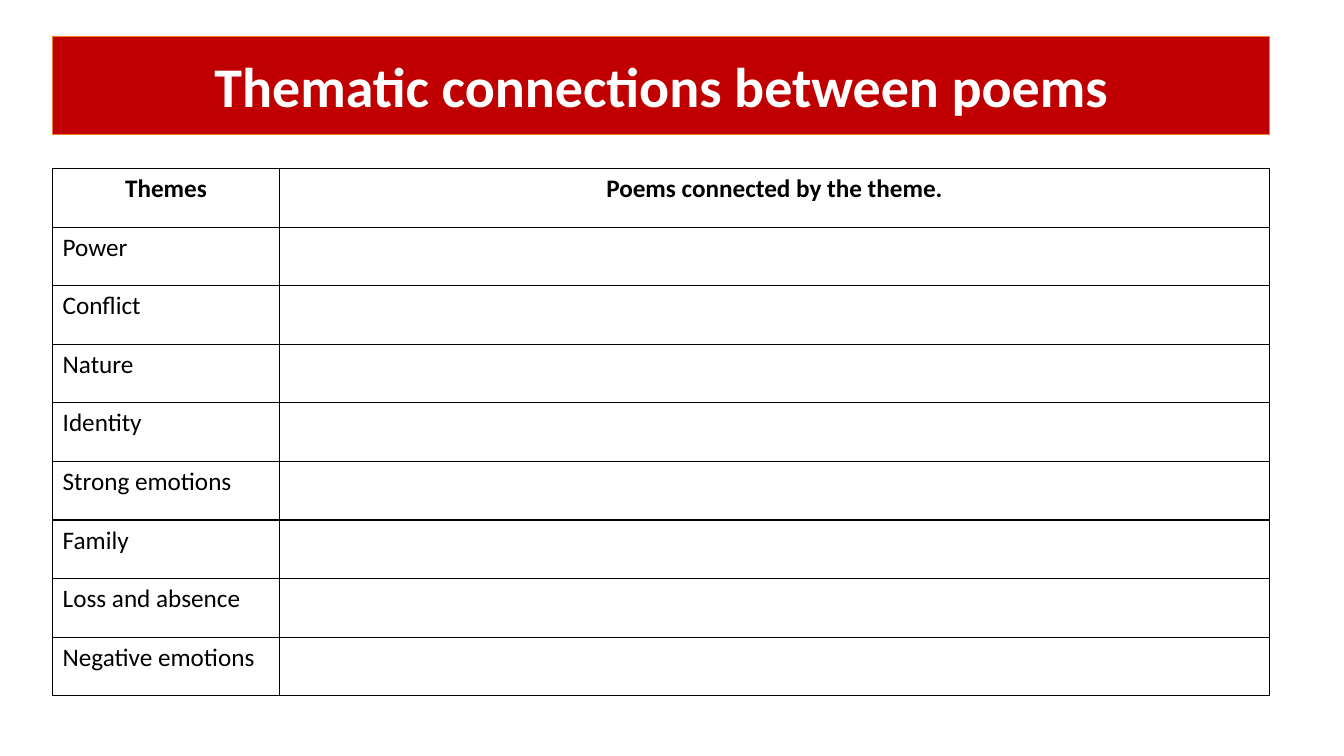
import pptx
import pptx.dml.color
import pptx.enum.shapes
import pptx.enum.text
import pptx.oxml
import pptx.oxml.ns
import pptx.util

Pt = pptx.util.Pt
CENTER = pptx.enum.text.PP_ALIGN.CENTER
LEFT = pptx.enum.text.PP_ALIGN.LEFT

COLORS = {"banner": "C00000", "banner_edge": "ED7D31", "title": "FFFFFF",
          "ink": "000000", "paper": "FFFFFF"}
FORMATS = {
    "title": {"name": "Calibri", "size": Pt(40), "bold": True},
    "header": {"name": "Calibri", "size": Pt(18), "bold": True},
    "theme": {"name": "Calibri", "size": Pt(18), "bold": False},
}
THEMES = ["Power", "Conflict", "Nature", "Identity", "Strong emotions",
          "Family", "Loss and absence", "Negative emotions"]


def color(key):
    return pptx.dml.color.RGBColor.from_string(COLORS[key])


def write(frame, text, style, ink, align):
    paragraph = frame.paragraphs[0]
    paragraph.text = text
    paragraph.alignment = align
    # An empty cell takes its row height from the paragraph font
    fonts = [run.font for run in paragraph.runs] or [paragraph.font]
    for font in fonts:
        for attribute, value in FORMATS[style].items():
            setattr(font, attribute, value)
        font.color.rgb = color(ink)


def add_borders(cell):
    properties = cell._tc.get_or_add_tcPr()
    for position, side in enumerate(("lnL", "lnR", "lnT", "lnB")):
        border = pptx.oxml.parse_xml(
            f'<a:{side} {pptx.oxml.ns.nsdecls("a")} w="{Pt(1)}"><a:solidFill>'
            f'<a:srgbClr val="{COLORS["ink"]}"/></a:solidFill></a:{side}>')
        properties.insert(position, border)


# Title banner
def add_banner(slide, left, top, width, height):
    banner = slide.shapes.add_shape(
        pptx.enum.shapes.MSO_SHAPE.RECTANGLE,
        Pt(left), Pt(top), Pt(width), Pt(height))
    banner.shadow.inherit = False
    banner.fill.solid()
    banner.fill.fore_color.rgb = color("banner")
    banner.line.color.rgb = color("banner_edge")
    banner.line.width = Pt(0.5)
    banner.text_frame.word_wrap = True
    banner.text_frame.vertical_anchor = pptx.enum.text.MSO_ANCHOR.MIDDLE
    write(banner.text_frame, "Thematic connections between poems",
          "title", "title", CENTER)


# Table of themes, with room to write in the poems
def add_theme_table(slide, left, top, width, height):
    rows = [("Themes", "Poems connected by the theme.")]
    rows += [(theme, "") for theme in THEMES]
    table = slide.shapes.add_table(
        len(rows), 2, Pt(left), Pt(top), Pt(width), Pt(height)).table
    table.horz_banding = False
    theme_width = 162
    table.columns[0].width = Pt(theme_width)
    table.columns[1].width = Pt(width - theme_width)
    for row_index, texts in enumerate(rows):
        table.rows[row_index].height = Pt(height / len(rows))
        style, align = ("theme", LEFT) if row_index else ("header", CENTER)
        for column_index, text in enumerate(texts):
            cell = table.cell(row_index, column_index)
            cell.fill.solid()
            cell.fill.fore_color.rgb = color("paper")
            write(cell.text_frame, text, style, "ink", align)
            add_borders(cell)


def main():
    deck = pptx.Presentation()
    deck.slide_width, deck.slide_height = Pt(960), Pt(540)
    slide = deck.slides.add_slide(deck.slide_layouts[6])
    left, width = 37.6, 869.4
    add_banner(slide, left, 26, width, 70)
    add_theme_table(slide, left, 120.4, width, 376.6)
    deck.save("out.pptx")


if __name__ == "__main__":
    main()
